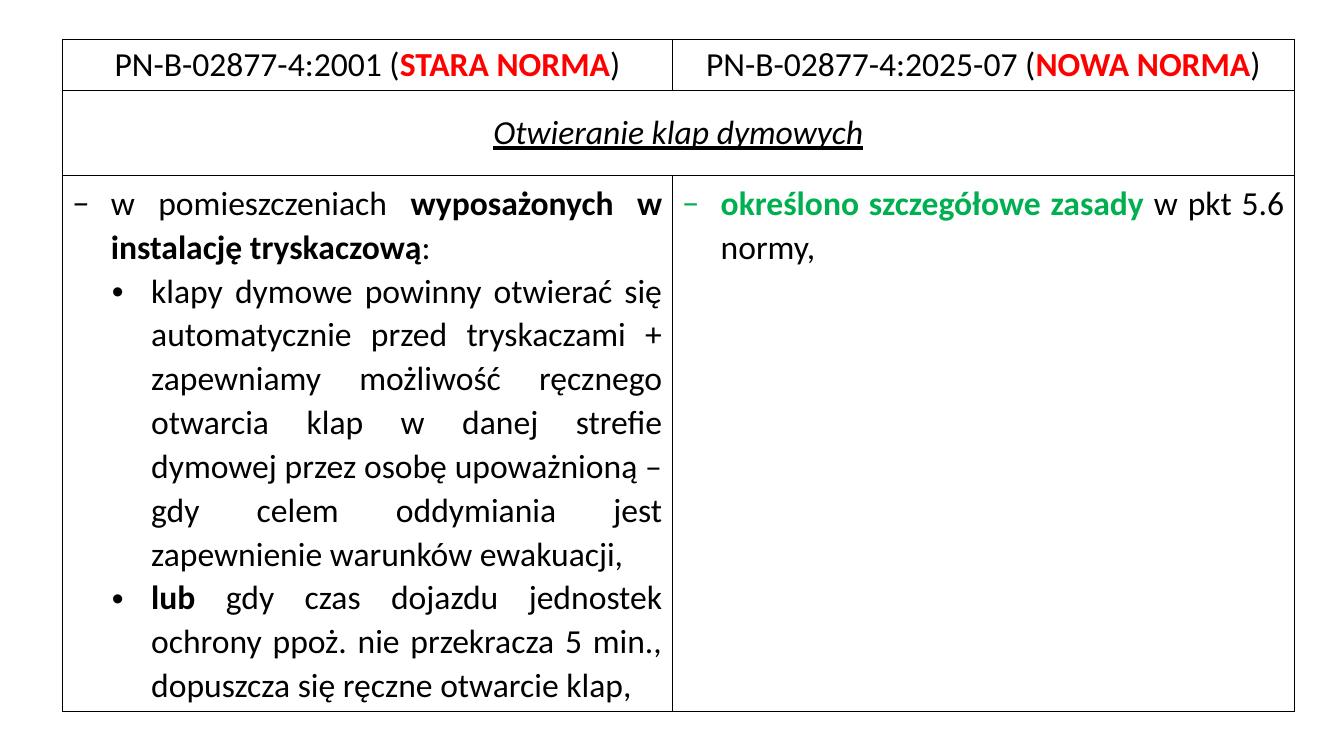
"""Builds a slide comparing the old and new standard on opening smoke vents."""
import pptx
import pptx.dml.color
import pptx.enum.text
import pptx.oxml
import pptx.oxml.ns
import pptx.util
from lxml import etree

Pt = pptx.util.Pt
RGBColor = pptx.dml.color.RGBColor
Align = pptx.enum.text.PP_ALIGN
Anchor = pptx.enum.text.MSO_ANCHOR
qn = pptx.oxml.ns.qn

BLACK = RGBColor(0x00, 0x00, 0x00)
WHITE = RGBColor(0xFF, 0xFF, 0xFF)
RED = RGBColor(0xFF, 0x00, 0x00)
GREEN = RGBColor(0x00, 0xB0, 0x50)

STYLES = {
    "plain": {},
    "bold": {"bold": True},
    "red": {"bold": True, "color": RED},
    "green": {"bold": True, "color": GREEN},
    "topic": {"italic": True, "underline": True},
}
LEVELS = {
    "heading": None,
    "dash": ("−", 27.36, "Calibri"),
    "dot": ("•", 56.16, "Arial"),
}
HANGING = {"dash": 27.36, "dot": 28.08}

CELLS = {
    (0, 0): [("heading", [("PN-B-02877-4:2001 (", "plain"), ("STARA NORMA", "red"), (")", "plain")])],
    (0, 1): [("heading", [("PN-B-02877-4:2025-07 (", "plain"), ("NOWA NORMA", "red"), (")", "plain")])],
    (1, 0): [("heading", [("Otwieranie klap dymowych", "topic")])],
    (2, 0): [
        ("dash", [
            ("w pomieszczeniach ", "plain"),
            ("wyposażonych w instalację tryskaczową", "bold"),
            (":", "plain"),
        ]),
        ("dot", [(
            "klapy dymowe powinny otwierać się automatycznie przed tryskaczami + "
            "zapewniamy możliwość ręcznego otwarcia klap w danej strefie dymowej "
            "przez osobę upoważnioną – gdy celem oddymiania jest zapewnienie "
            "warunków ewakuacji,", "plain")]),
        ("dot", [
            ("lub", "bold"),
            (" gdy czas dojazdu jednostek ochrony ppoż. nie przekracza 5 min., "
             "dopuszcza się ręczne otwarcie klap,", "plain"),
        ]),
    ],
    (2, 1): [("dash", [("określono szczegółowe zasady ", "green"), ("w pkt 5.6 normy,", "plain")])],
}
LEFT, TOP = 44.64, 28.4
COLUMN_WIDTHS = [435.6, 444.24]
ROW_HEIGHTS = [35.28, 60.48, 378]


def add_borders(cell):
    properties = cell._tc.get_or_add_tcPr()
    for position, side in enumerate(("lnL", "lnR", "lnT", "lnB")):
        line = etree.Element(qn("a:" + side), w=str(Pt(1)))
        fill = etree.SubElement(line, qn("a:solidFill"))
        etree.SubElement(fill, qn("a:srgbClr"), val=str(BLACK))
        properties.insert(position, line)


def format_paragraph(para, level):
    if level == "heading":
        para.alignment = Align.CENTER
        return
    symbol, indent, typeface = LEVELS[level]
    para.alignment = Align.JUSTIFY
    para.line_spacing = 1.07
    properties = para._p.get_or_add_pPr()
    properties.set("marL", str(Pt(indent)))
    properties.set("indent", str(-Pt(HANGING[level])))
    etree.SubElement(properties, qn("a:buFont"), typeface=typeface)
    etree.SubElement(properties, qn("a:buChar"), char=symbol)


def add_span(para, text, style):
    span = para.add_run()
    span.text = text
    font = span.font
    font.name, font.size = "Calibri", Pt(24)
    font.bold = style.get("bold", False)
    font.italic = style.get("italic", False)
    font.underline = style.get("underline", False)
    font.color.rgb = style.get("color", BLACK)


def fill_cell(cell, paragraphs):
    frame = cell.text_frame
    for number, (level, spans) in enumerate(paragraphs):
        para = frame.add_paragraph() if number else frame.paragraphs[0]
        format_paragraph(para, level)
        for text, style in spans:
            add_span(para, text, STYLES[style])
    if paragraphs[-1][0] != "heading":
        para.space_after = Pt(8)


def main():
    deck = pptx.Presentation()
    deck.slide_width, deck.slide_height = Pt(960), Pt(540)
    page = deck.slides.add_slide(deck.slide_layouts[6])
    table = page.shapes.add_table(
        len(ROW_HEIGHTS), len(COLUMN_WIDTHS), Pt(LEFT), Pt(TOP),
        Pt(sum(COLUMN_WIDTHS)), Pt(sum(ROW_HEIGHTS))).table
    table.first_row = table.horz_banding = False
    for column, width in zip(table.columns, COLUMN_WIDTHS):
        column.width = Pt(width)
    for row, height in zip(table.rows, ROW_HEIGHTS):
        row.height = Pt(height)
    table.cell(1, 0).merge(table.cell(1, 1))
    for cell in (cell for row in table.rows for cell in row.cells):
        cell.fill.solid()
        cell.fill.fore_color.rgb = WHITE
        add_borders(cell)
    for (row, column), paragraphs in CELLS.items():
        cell = table.cell(row, column)
        cell.vertical_anchor = Anchor.TOP if row == 2 else Anchor.MIDDLE
        fill_cell(cell, paragraphs)
    deck.save("out.pptx")


if __name__ == "__main__":
    main()
